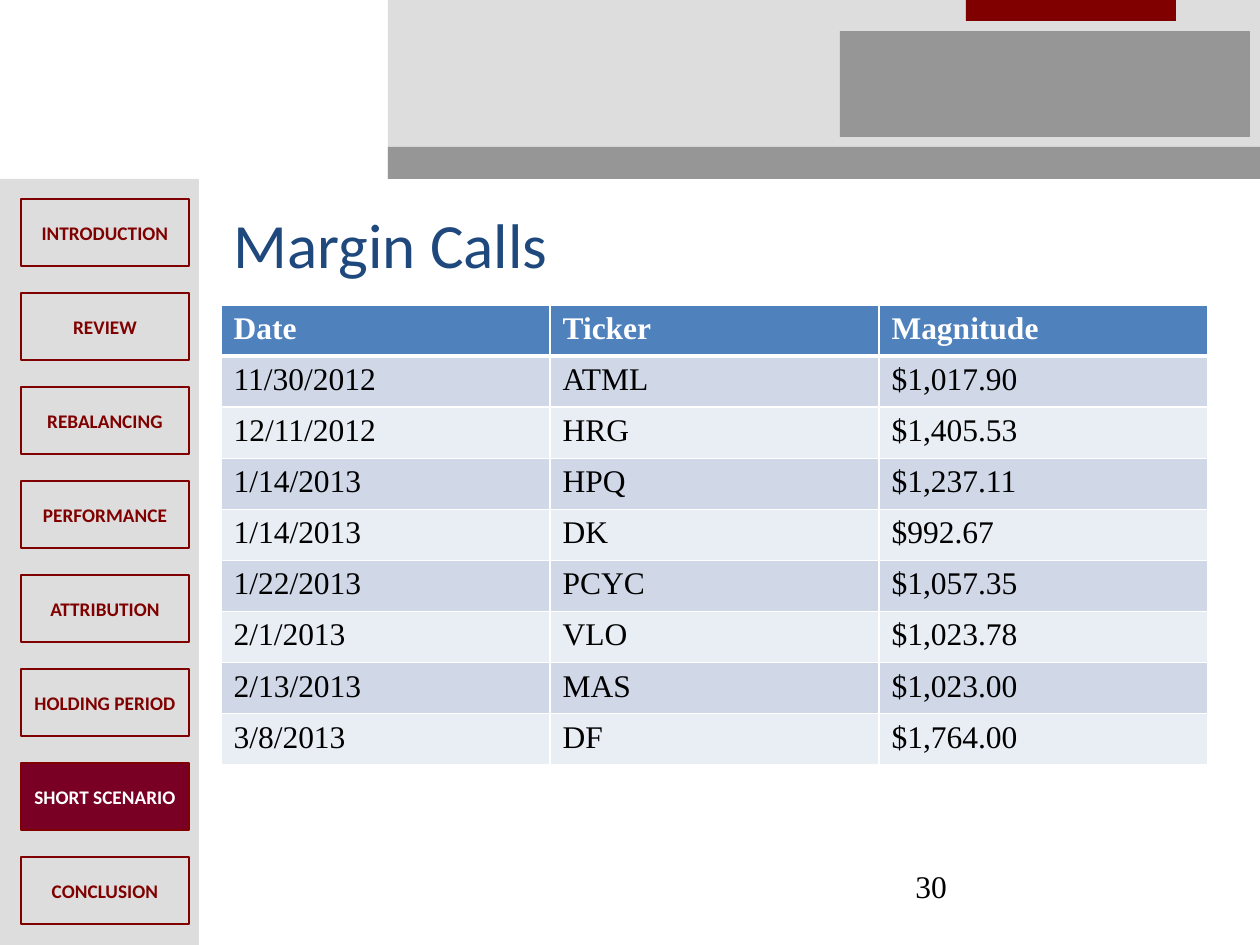
from dataclasses import dataclass
from typing import Optional

from lxml import etree
from pptx import Presentation
from pptx.dml.color import RGBColor
from pptx.enum.shapes import MSO_SHAPE
from pptx.enum.text import MSO_ANCHOR, PP_ALIGN
from pptx.oxml.ns import qn
from pptx.util import Emu, Pt

RECTANGLE = MSO_SHAPE.RECTANGLE
TOP, MIDDLE = MSO_ANCHOR.TOP, MSO_ANCHOR.MIDDLE
LEFT, CENTER = PP_ALIGN.LEFT, PP_ALIGN.CENTER

PX_PER_INCH = 126
SANS, SERIF = "Calibri", "Times New Roman"
COLORS = {
    "maroon": "800000", "active": "790024", "panel": "DDDDDD", "strip": "969696",
    "title": "1F497D", "header": "4F81BD",
    "band_dark": "D0D8E8", "band_light": "E9EDF4", "white": "FFFFFF", "black": "000000",
}


@dataclass(frozen=True)
class Box:
    left: int
    top: int
    width: int
    height: int

    def emu(self) -> tuple:
        return tuple(px(n) for n in (self.left, self.top, self.width, self.height))


@dataclass(frozen=True)
class Style:
    size: float
    font: str
    color: str
    bold: bool = False


NAV_SECTIONS = ["INTRODUCTION", "REVIEW", "REBALANCING", "PERFORMANCE",
                "ATTRIBUTION", "HOLDING PERIOD", "SHORT SCENARIO", "CONCLUSION"]
ACTIVE_SECTION = "SHORT SCENARIO"
NAV_TOP, NAV_STEP = 199, 94

MARGIN_CALLS = [
    ("Date", "Ticker", "Magnitude"),
    ("11/30/2012", "ATML", "$1,017.90"),
    ("12/11/2012", "HRG", "$1,405.53"),
    ("1/14/2013", "HPQ", "$1,237.11"),
    ("1/14/2013", "DK", "$992.67"),
    ("1/22/2013", "PCYC", "$1,057.35"),
    ("2/1/2013", "VLO", "$1,023.78"),
    ("2/13/2013", "MAS", "$1,023.00"),
    ("3/8/2013", "DF", "$1,764.00"),
]


def px(count: int) -> Emu:
    return Emu(round(count * 914400 / PX_PER_INCH))


def rgb(name: str) -> RGBColor:
    return RGBColor.from_string(COLORS[name])


def style_paragraph(paragraph, style: Style, align=LEFT) -> None:
    paragraph.alignment = align
    for run in paragraph.runs:
        run.font.size = Pt(style.size)
        run.font.name = style.font
        run.font.bold = style.bold
        run.font.color.rgb = rgb(style.color)


def add_rectangle(slide, box: Box, fill: Optional[str] = None,
                  line: Optional[str] = None):
    rectangle = slide.shapes.add_shape(RECTANGLE, *box.emu())
    rectangle.shadow.inherit = False
    if fill:
        rectangle.fill.solid()
        rectangle.fill.fore_color.rgb = rgb(fill)
    else:
        rectangle.fill.background()
    if line:
        rectangle.line.color.rgb = rgb(line)
        rectangle.line.width = Pt(1.5)
    else:
        rectangle.line.fill.background()
    return rectangle


def add_backdrop(slide) -> None:
    add_rectangle(slide, Box(388, 0, 872, 179), "panel")
    add_rectangle(slide, Box(0, 179, 199, 766), "panel")
    add_rectangle(slide, Box(966, 0, 210, 21), "maroon")
    add_rectangle(slide, Box(388, 147, 872, 32), "strip")


def add_header_block(slide) -> None:
    add_rectangle(slide, Box(840, 31, 410, 106), "strip")


def add_navigation(slide) -> None:
    for index, section in enumerate(NAV_SECTIONS):
        active = section == ACTIVE_SECTION
        button = add_rectangle(slide, Box(21, NAV_TOP + index * NAV_STEP, 168, 67),
                               "active" if active else None, "maroon")
        frame = button.text_frame
        frame.text = section
        frame.word_wrap = False
        frame.vertical_anchor = MIDDLE
        label = Style(11, SANS, "white" if active else "maroon", True)
        style_paragraph(frame.paragraphs[0], label, CENTER)


def set_title(slide, text: str) -> None:
    title = slide.shapes.title
    title.left, title.top, title.width, title.height = Box(221, 199, 976, 105).emu()
    title.text_frame.text = text
    title.text_frame.vertical_anchor = TOP
    style_paragraph(title.text_frame.paragraphs[0], Style(36, SANS, "title"))


def set_borders(cell, bottom_width: float, top_width: float) -> None:
    properties = cell._tc.get_or_add_tcPr()
    widths = {"a:lnL": 1, "a:lnR": 1, "a:lnT": top_width, "a:lnB": bottom_width}
    for tag, width in widths.items():
        border = etree.SubElement(properties, qn(tag), w=str(Pt(width)))
        fill = etree.SubElement(border, qn("a:solidFill"))
        etree.SubElement(fill, qn("a:srgbClr"), val=COLORS["white"])


def add_margin_table(slide) -> None:
    rows, columns = len(MARGIN_CALLS), len(MARGIN_CALLS[0])
    box = Box(221, 305, 987, 460)
    table = slide.shapes.add_table(rows, columns, *box.emu()).table
    for row, values in enumerate(MARGIN_CALLS):
        header = row == 0
        fill = "header" if header else "band_dark" if row % 2 else "band_light"
        style = Style(18, SERIF, "white" if header else "black", header)
        for column, value in enumerate(values):
            cell = table.cell(row, column)
            cell.text = value
            style_paragraph(cell.text_frame.paragraphs[0], style)
            set_borders(cell, 3 if header else 1, 3 if row == 1 else 1)
            cell.fill.solid()
            cell.fill.fore_color.rgb = rgb(fill)


def add_page_number(slide, number: str) -> None:
    frame = slide.shapes.add_textbox(*Box(903, 861, 262, 63).emu()).text_frame
    frame.word_wrap = True
    frame.text = number
    style_paragraph(frame.paragraphs[0], Style(18, SERIF, "black"))


def main() -> None:
    presentation = Presentation()
    presentation.slide_width, presentation.slide_height = px(1260), px(945)
    slide = presentation.slides.add_slide(presentation.slide_layouts[5])
    add_backdrop(slide)
    add_header_block(slide)
    add_navigation(slide)
    set_title(slide, "Margin Calls")
    add_margin_table(slide)
    add_page_number(slide, "30")
    presentation.save("out.pptx")


if __name__ == "__main__":
    main()
